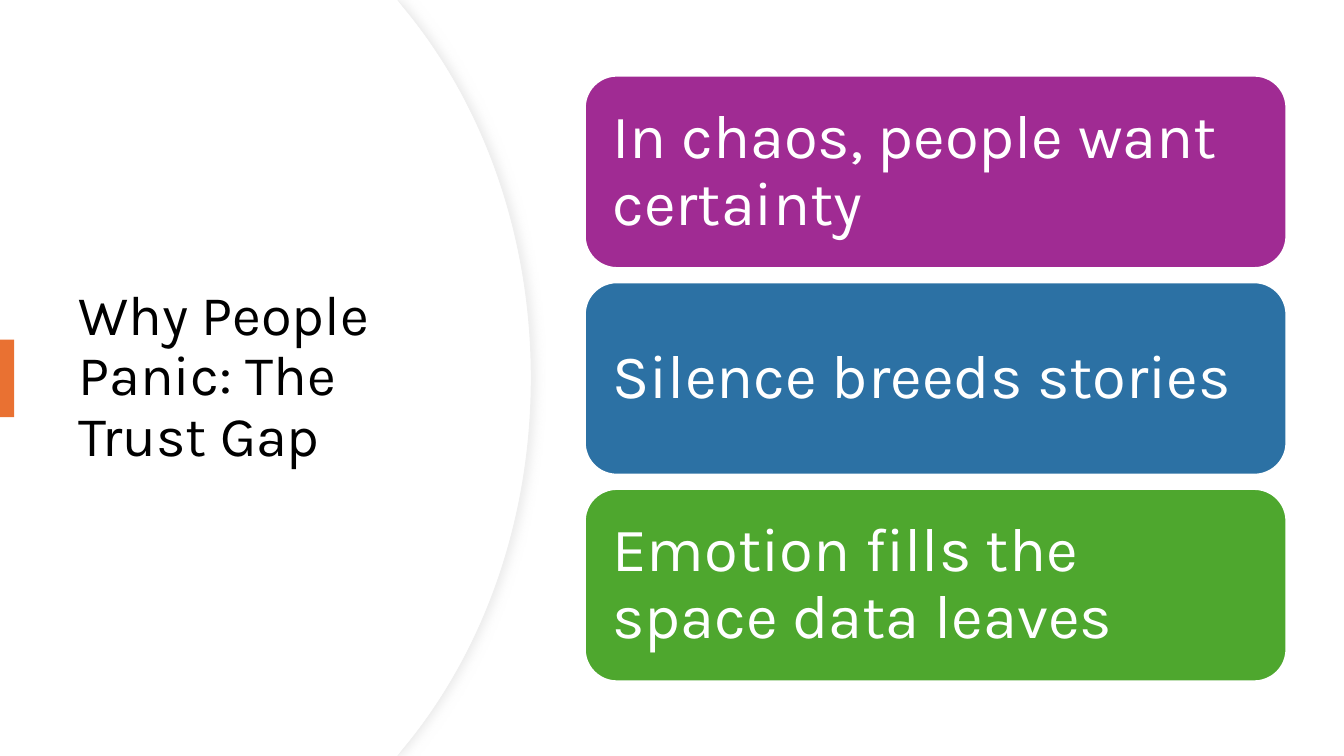
from dataclasses import dataclass

from lxml import etree
from pptx import Presentation
from pptx import util as u
from pptx.dml.color import RGBColor
from pptx.enum import shapes, text
from pptx.oxml import ns


@dataclass(frozen=True)
class Theme:
    font: str = "Karla"
    title_size: int = 40
    card_size: int = 44
    white: str = "FFFFFF"
    black: str = "000000"
    edge: str = "EFEFEF"
    shadow: str = "D9D9D9"
    accent: str = "E97132"


THEME = Theme()
WIDTH, HEIGHT = 13.33, 7.5
CARD_LEFT, CARD_TOP, CARD_WIDTH, CARD_HEIGHT = 5.8, 0.75, 6.96, 1.91
CARD_PITCH = 2.05
CARDS = [
    ("In chaos, people want certainty", "A02B93"),
    ("Silence breeds stories", "2C71A4"),
    ("Emotion fills the space data leaves", "4EA72E"),
]


def color(value):
    return RGBColor.from_string(value)


def paint(shape, fill, line=None, line_width=0):
    shape.shadow.inherit = False
    shape.fill.solid()
    shape.fill.fore_color.rgb = color(fill)
    if line:
        shape.line.color.rgb = color(line)
        shape.line.width = u.Pt(line_width)
    else:
        shape.line.fill.background()


def write(shape, words, size, ink, inset_x, inset_y):
    frame = shape.text_frame
    frame.word_wrap = True
    frame.vertical_anchor = text.MSO_ANCHOR.MIDDLE
    frame.margin_left = frame.margin_right = u.Inches(inset_x)
    frame.margin_top = frame.margin_bottom = u.Inches(inset_y)
    para = frame.paragraphs[0]
    para.text = words
    para.alignment = text.PP_ALIGN.LEFT
    para.line_spacing = 0.9
    para.font.name = THEME.font
    para.font.size = u.Pt(size)
    para.font.color.rgb = color(ink)


def bend(segments):
    curve = segments[0]
    curve.tag = ns.qn("a:cubicBezTo")
    for segment in segments[1:]:
        curve.append(segment[0])
        segment.getparent().remove(segment)


def add_curved_panel(page, reach, line=None):
    upper = [(3.94, 0), (reach - 1.26, 0.08), (reach - 0.48, 1.02), (reach, 2.32)]
    lower = [(x, HEIGHT - y) for x, y in reversed(upper)]
    corners = upper + [(reach, HEIGHT / 2)] + lower + [(0, HEIGHT)]
    builder = page.shapes.build_freeform(0, 0)
    builder.add_line_segments([(u.Inches(x), u.Inches(y)) for x, y in corners])
    panel = builder.convert_to_shape()
    segments = list(panel.element.iter(ns.qn("a:lnTo")))
    bend(segments[2:5])
    bend(segments[5:8])
    paint(panel, THEME.white, line, 0.75)
    return panel


def add_shadow(shape):
    effects = shape.element.spPr.find(ns.qn("a:effectLst"))
    outer = etree.SubElement(
        effects, ns.qn("a:outerShdw"),
        blurRad=str(u.Pt(7)), dist=str(u.Pt(3)), dir="0", algn="l", rotWithShape="0",
    )
    tint = etree.SubElement(outer, ns.qn("a:srgbClr"), val=THEME.shadow)
    etree.SubElement(tint, ns.qn("a:alpha"), val="50000")


def add_box(page, kind, left, top, width, height):
    return page.shapes.add_shape(
        kind, u.Inches(left), u.Inches(top), u.Inches(width), u.Inches(height)
    )


def add_title(page, words):
    box = page.shapes.add_textbox(
        u.Inches(0.68), u.Inches(1.27), u.Inches(3.94), u.Inches(4.95)
    )
    write(box, words, THEME.title_size, THEME.black, 0.1, 0.05)


def add_card(page, index, words, fill):
    top = CARD_TOP + index * CARD_PITCH
    card = add_box(
        page, shapes.MSO_SHAPE.ROUNDED_RECTANGLE, CARD_LEFT, top, CARD_WIDTH, CARD_HEIGHT
    )
    paint(card, fill, THEME.white, 1.5)
    write(card, words, THEME.card_size, THEME.white, 0.18, 0.18)


def main():
    deck = Presentation()
    deck.slide_width, deck.slide_height = u.Inches(WIDTH), u.Inches(HEIGHT)
    page = deck.slides.add_slide(deck.slide_layouts[6])

    add_shadow(add_curved_panel(page, 5.27, THEME.edge))
    add_curved_panel(page, 5.26)
    add_title(page, "Why People Panic: The Trust Gap")
    marker = add_box(page, shapes.MSO_SHAPE.RECTANGLE, 0, 3.37, 0.14, 0.77)
    paint(marker, THEME.accent)
    for index, (words, fill) in enumerate(CARDS):
        add_card(page, index, words, fill)

    deck.save("out.pptx")


if __name__ == "__main__":
    main()
